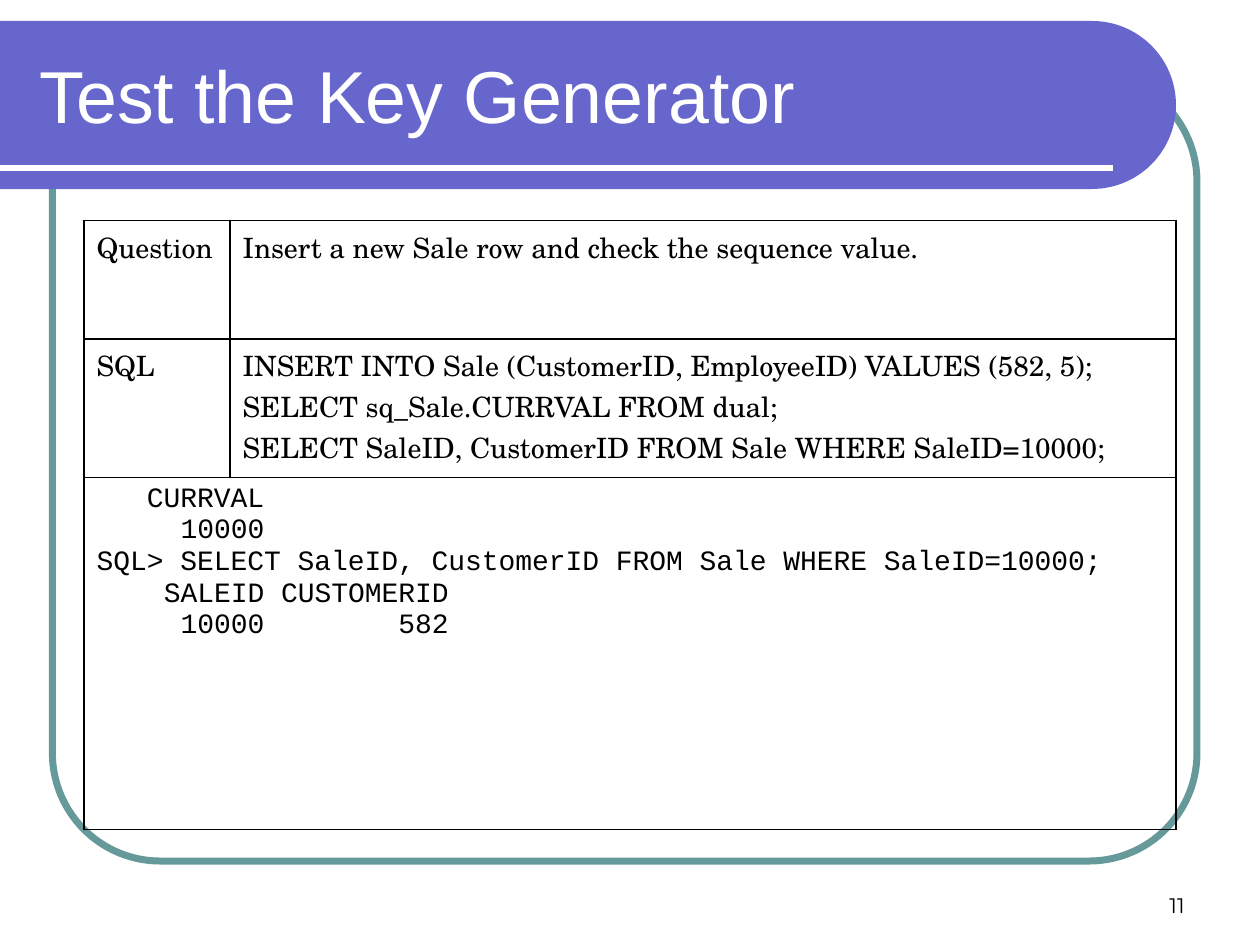
from dataclasses import dataclass
from math import cos, radians, sin

from pptx import Presentation
from pptx.dml.color import RGBColor
from pptx.enum.shapes import MSO_CONNECTOR as Connector, MSO_SHAPE as Shape
from pptx.enum.text import MSO_ANCHOR as Anchor, PP_ALIGN as Align
from pptx.oxml.ns import qn
from pptx.util import Pt
from lxml.etree import SubElement


@dataclass(frozen=True)
class Theme:
    """Colours, fonts and type sizes of the deck."""
    ink: RGBColor = RGBColor(0, 0, 0)
    paper: RGBColor = RGBColor(255, 255, 255)
    banner: RGBColor = RGBColor.from_string("6666CC")
    frame: RGBColor = RGBColor.from_string("669999")
    title_font: str = "Arial"
    body_font: str = "TeX Gyre Schola"
    code_font: str = "Courier New"
    number_font: str = "Montserrat"
    title_size: int = 42
    body_size: int = 16
    number_size: int = 12


THEME = Theme()
CODE_CHAR_WIDTH = 0.6 * THEME.body_size
OUTPUT_COLUMNS = (10, 11)

QUESTION = ["Insert a new Sale row and check the sequence value."]
STATEMENTS = [
    "INSERT INTO Sale (CustomerID, EmployeeID) VALUES (582, 5);",
    "SELECT sq_Sale.CURRVAL FROM dual;",
    "SELECT SaleID, CustomerID FROM Sale WHERE SaleID=10000;",
]
OUTPUT = [
    ("CURRVAL",),
    ("10000",),
    (f"SQL> {STATEMENTS[-1]}",),
    ("SALEID", "CUSTOMERID"),
    ("10000", "582"),
]


def points(*lengths):
    """Convert numbers to point lengths."""
    return [Pt(length) for length in lengths]


def write_span(para, text, font, size, color):
    """Add one formatted span to a paragraph."""
    span = para.add_run()
    span.text = text
    for name, value in {"name": font, "size": Pt(size)}.items():
        setattr(span.font, name, value)
    span.font.color.rgb = color


def add_label(page, box, text, font, size, color, anchor, align):
    """Place a single line of text in the given box."""
    frame = page.shapes.add_textbox(*points(*box)).text_frame
    for name, value in {"word_wrap": True, "vertical_anchor": anchor}.items():
        setattr(frame, name, value)
    para = frame.paragraphs[0]
    para.alignment = align
    write_span(para, text, font, size, color)


def add_frame(page, box):
    """Draw the rounded outline around the content."""
    outline = page.shapes.add_shape(Shape.ROUNDED_RECTANGLE, *points(*box))
    outline.adjustments[0] = 0.137
    outline.shadow.inherit = False
    outline.fill.background()
    outline.line.color.rgb = THEME.frame
    outline.line.width = Pt(4)


def add_banner(page, box):
    """Draw the title band with a round right end and a rule near its foot."""
    left, top, width, height = box
    radius = height / 2
    center_x, center_y = left + width - radius, top + radius
    arc = [
        points(center_x + radius * cos(radians(angle)), center_y + radius * sin(radians(angle)))
        for angle in range(-90, 91, 3)
    ]
    builder = page.shapes.build_freeform(*points(left, top))
    builder.add_line_segments([*arc, points(left, top + height)], close=True)
    band = builder.convert_to_shape()
    band.shadow.inherit = False
    band.fill.solid()
    band.fill.fore_color.rgb = THEME.banner
    band.line.fill.background()

    rule_y = top + height - 12
    rule = page.shapes.add_connector(
        Connector.STRAIGHT, *points(left, rule_y, center_x + 12, rule_y)
    )
    rule.line.color.rgb = THEME.paper
    rule.line.width = Pt(3)
    SubElement(rule._element.spPr, qn("a:effectLst"))


def style_cell(cell):
    """Give a cell thin borders on all sides and no fill."""
    properties = cell._tc.get_or_add_tcPr()
    for side in ("lnL", "lnR", "lnT", "lnB"):
        border = SubElement(properties, qn(f"a:{side}"), w=str(Pt(1)))
        fill = SubElement(border, qn("a:solidFill"))
        SubElement(fill, qn("a:srgbClr"), val=str(THEME.ink))
    cell.fill.background()


def write_cell(cell, lines, font):
    """Write (text, left margin, first-line indent) lines into a table cell."""
    frame = cell.text_frame
    for index, (text, margin, indent) in enumerate(lines):
        para = frame.add_paragraph() if index else frame.paragraphs[0]
        properties = para._p.get_or_add_pPr()
        for name, value in {"marL": margin, "indent": indent}.items():
            properties.set(name, str(Pt(value)))
        write_span(para, text, font, THEME.body_size, THEME.ink)


def hanging_lines(texts):
    """Give each text a hanging indent."""
    return [(text, 27, -27) for text in texts]


def output_line(fields):
    """Right-align the fields of one output row on the character grid."""
    first, *others = fields
    first_width, other_width = OUTPUT_COLUMNS
    text = first + "".join(field.rjust(other_width) for field in others)
    return text, max(first_width - len(first), 0) * CODE_CHAR_WIDTH, 0


def add_query_table(page, box):
    """Place the question, its SQL and the output in a bordered table."""
    width, height = box[2:]
    label_width, row_heights = 83.5, (67.7, 79.2)
    table = page.shapes.add_table(3, 2, *points(*box)).table
    for name in ("first_row", "horz_banding"):
        setattr(table, name, False)
    for column, size in zip(table.columns, (label_width, width - label_width)):
        column.width = Pt(size)
    for row, size in zip(table.rows, (*row_heights, height - sum(row_heights))):
        row.height = Pt(size)
    for cell in table.iter_cells():
        style_cell(cell)
    table.cell(2, 0).merge(table.cell(2, 1))

    for row, content in enumerate(((["Question"], QUESTION), (["SQL"], STATEMENTS))):
        for column, texts in enumerate(content):
            write_cell(table.cell(row, column), hanging_lines(texts), THEME.body_font)
    write_cell(table.cell(2, 0), map(output_line, OUTPUT), THEME.code_font)


def build_slide(page):
    """Lay out all regions of the slide."""
    add_frame(page, (30, 42, 654, 450))
    add_banner(page, (0, 12, 672, 96))
    add_label(page, (516, 492, 168, 36), "11", THEME.number_font,
              THEME.number_size, THEME.ink, Anchor.BOTTOM, Align.RIGHT)
    add_label(page, (15.5, 18, 631.5, 72), "Test the Key Generator", THEME.title_font,
              THEME.title_size, THEME.paper, Anchor.MIDDLE, Align.LEFT)
    add_query_table(page, (48, 126, 624, 348))


def main():
    """Build and save the deck."""
    deck = Presentation()
    deck.slide_width, deck.slide_height = points(720, 540)
    build_slide(deck.slides.add_slide(deck.slide_layouts[6]))
    deck.save("out.pptx")


if __name__ == "__main__":
    main()
